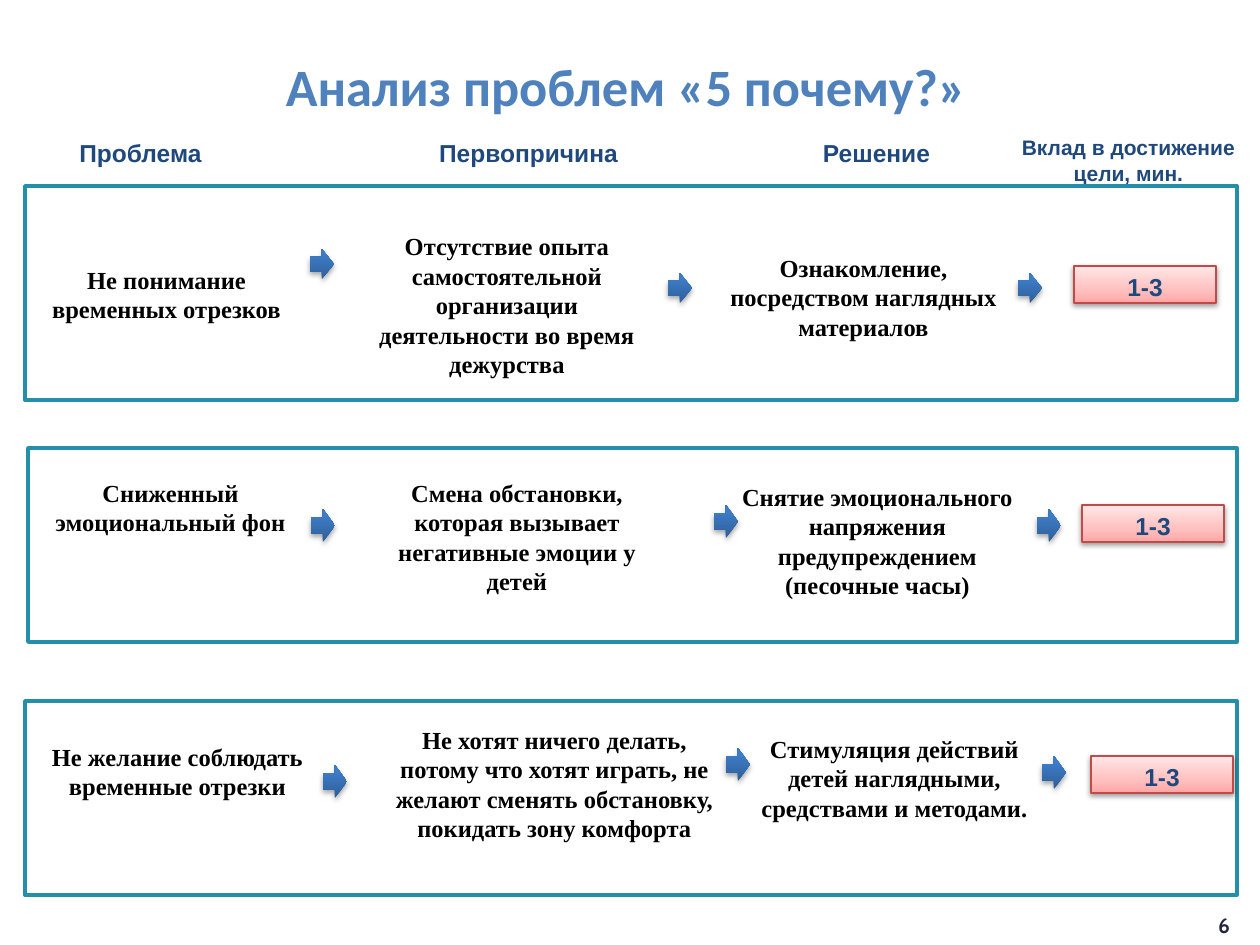
import pptx
import pptx.util
import pptx.oxml
import pptx.oxml.ns
from pptx.dml.color import RGBColor
from pptx.enum.shapes import MSO_SHAPE
from pptx.enum.text import MSO_ANCHOR, PP_ALIGN

SCALE = 914400 / 126  # EMU in one px
NAVY, TEAL, RED = "1F497D", "248FA8", "BF4C48"
BLUES = [(0, "2F5F99"), (80, "3D7CC7"), (100, "3A7CCB")]
PINKS = [(0, "FFA6A5"), (35, "FFC0BF"), (100, "FFE7E7")]
SERIF = "Times New Roman"
HEAD_PAD = (13, 6, 13, 1)
BODY_PAD = (13, 11, 13, 1)

# Column heads: box, text, size
HEADS = [
    ((25, 132, 231, 38), "Проблема", 14),
    ((413, 132, 231, 38), "Первопричина", 14),
    ((767, 132, 219, 38), "Решение", 14),
    ((1004, 129, 249, 59), "Вклад в достижение цели, мин.", 12),
]

# Rows: frame, texts with their boxes, arrow places and height, badge place
ROWS = [
    {
        "frame": (25, 186, 1212, 214),
        "texts": [
            ((30, 253, 273, 73), "Не понимание временных отрезков"),
            ((348, 219, 318, 162), "Отсутствие опыта самостоятельной организации "
                                   "деятельности во время дежурства"),
            ((711, 241, 305, 102), "Ознакомление, посредством наглядных материалов"),
        ],
        "arrows": [(310, 249), (668, 273), (1018, 273)],
        "tall": 30,
        "badge": (1074, 266),
    },
    {
        "frame": (28, 448, 1209, 194),
        "texts": [
            ((25, 465, 291, 74), "Сниженный эмоциональный фон"),
            ((362, 465, 310, 133), "Смена обстановки, которая вызывает "
                                   "негативные эмоции у детей"),
            ((725, 469, 305, 133), "Снятие эмоционального напряжения "
                                   "предупреждением (песочные часы)"),
        ],
        "arrows": [(311, 509), (714, 505), (1037, 509)],
        "tall": 33,
        "badge": (1082, 505),
    },
    {
        "frame": (25, 701, 1212, 194),
        "texts": [
            ((32, 730, 291, 72), "Не желание соблюдать временные отрезки"),
            ((372, 712, 365, 133), "Не хотят ничего делать, потому что хотят играть, не "
                                   "желают сменять обстановку, покидать зону комфорта"),
            ((742, 722, 305, 102), "Стимуляция действий детей наглядными, "
                                   "средствами и методами."),
        ],
        "arrows": [(323, 765), (726, 748), (1042, 756)],
        "tall": 33,
        "badge": (1091, 756),
    },
]


def emu(*px):
    return [round(n * SCALE) for n in px]


def hue(code):
    return RGBColor.from_string(code)


def write(shape, text, size, font, color, mid=True, pad=None, gap=None):
    """Put one bold, centred paragraph into a shape."""
    frame = shape.text_frame
    frame.word_wrap = True
    frame.vertical_anchor = MSO_ANCHOR.MIDDLE if mid else MSO_ANCHOR.TOP
    if pad:
        (frame.margin_left, frame.margin_top,
         frame.margin_right, frame.margin_bottom) = emu(*pad)
    para = frame.paragraphs[0]
    para.alignment = PP_ALIGN.CENTER
    if gap:
        para.line_spacing = gap
    run = para.add_run()
    run.text = text
    run.font.size = pptx.util.Pt(size)
    run.font.name = font
    run.font.bold = True
    run.font.color.rgb = hue(color)


def label(slide, box, text, **form):
    write(slide.shapes.add_textbox(*emu(*box)), text, **form)


def shade(shape, stops, alpha, drop):
    """Give a shape an upward gradient and a soft shadow below."""
    space = pptx.oxml.ns.nsdecls("a")
    marks = "".join(f'<a:gs pos="{pos * 1000}"><a:srgbClr val="{code}"/></a:gs>'
                    for pos, code in stops)
    fill = pptx.oxml.parse_xml(
        f'<a:gradFill {space} rotWithShape="1"><a:gsLst>{marks}</a:gsLst>'
        '<a:lin ang="16200000" scaled="0"/></a:gradFill>')
    glow = pptx.oxml.parse_xml(
        f'<a:effectLst {space}><a:outerShdw blurRad="{pptx.util.Pt(3.1)}" '
        f'dist="{pptx.util.Pt(drop)}" dir="5400000" rotWithShape="0">'
        f'<a:srgbClr val="000000"><a:alpha val="{alpha * 1000}"/></a:srgbClr>'
        '</a:outerShdw></a:effectLst>')
    props = shape._element.spPr
    props.find(pptx.oxml.ns.qn("a:prstGeom")).addnext(fill)
    props.append(glow)


def block(slide, kind, box, line=None, width=1):
    shape = slide.shapes.add_shape(kind, *emu(*box))
    if line:
        shape.line.color.rgb = hue(line)
        shape.line.width = pptx.util.Pt(width)
    else:
        shape.line.fill.background()
    return shape


def border(slide, box):
    shape = block(slide, MSO_SHAPE.RECTANGLE, box, TEAL, 2)
    shape.fill.background()
    shape.shadow.inherit = False


def arrow(slide, left, top, tall):
    shape = block(slide, MSO_SHAPE.RIGHT_ARROW, (left, top, 24, tall))
    shade(shape, BLUES, alpha=35, drop=1.8)


def badge(slide, left, top):
    shape = block(slide, MSO_SHAPE.RECTANGLE, (left, top, 142, 37), RED, 0.75)
    shade(shape, PINKS, alpha=38, drop=1.6)
    write(shape, "1-3", size=14, font="Arial", color=NAVY, pad=BODY_PAD, gap=0.8)


def main():
    deck = pptx.Presentation()
    deck.slide_width, deck.slide_height = emu(1260, 945)
    slide = deck.slides.add_slide(deck.slide_layouts[5])

    # Title
    title = slide.shapes.title
    title.left, title.top, title.width, title.height = emu(28, 57, 1197, 58)
    write(title, "Анализ проблем «5 почему?»", size=30, font="Calibri", color="4F81BD")

    # Column heads
    for box, text, size in HEADS:
        label(slide, box, text, size=size, font="Arial", color=NAVY,
              mid=False, pad=HEAD_PAD)

    # Chains from problem to result
    for row in ROWS:
        border(slide, row["frame"])
        for box, text in row["texts"]:
            label(slide, box, text, size=14, font=SERIF, color="000000", pad=BODY_PAD)
        for left, top in row["arrows"]:
            arrow(slide, left, top, row["tall"])
        badge(slide, *row["badge"])

    # Page number
    label(slide, (1193, 906, 62, 39), "6", size=12, font="Cabin", color="23263C")
    deck.save("out.pptx")


if __name__ == "__main__":
    main()
